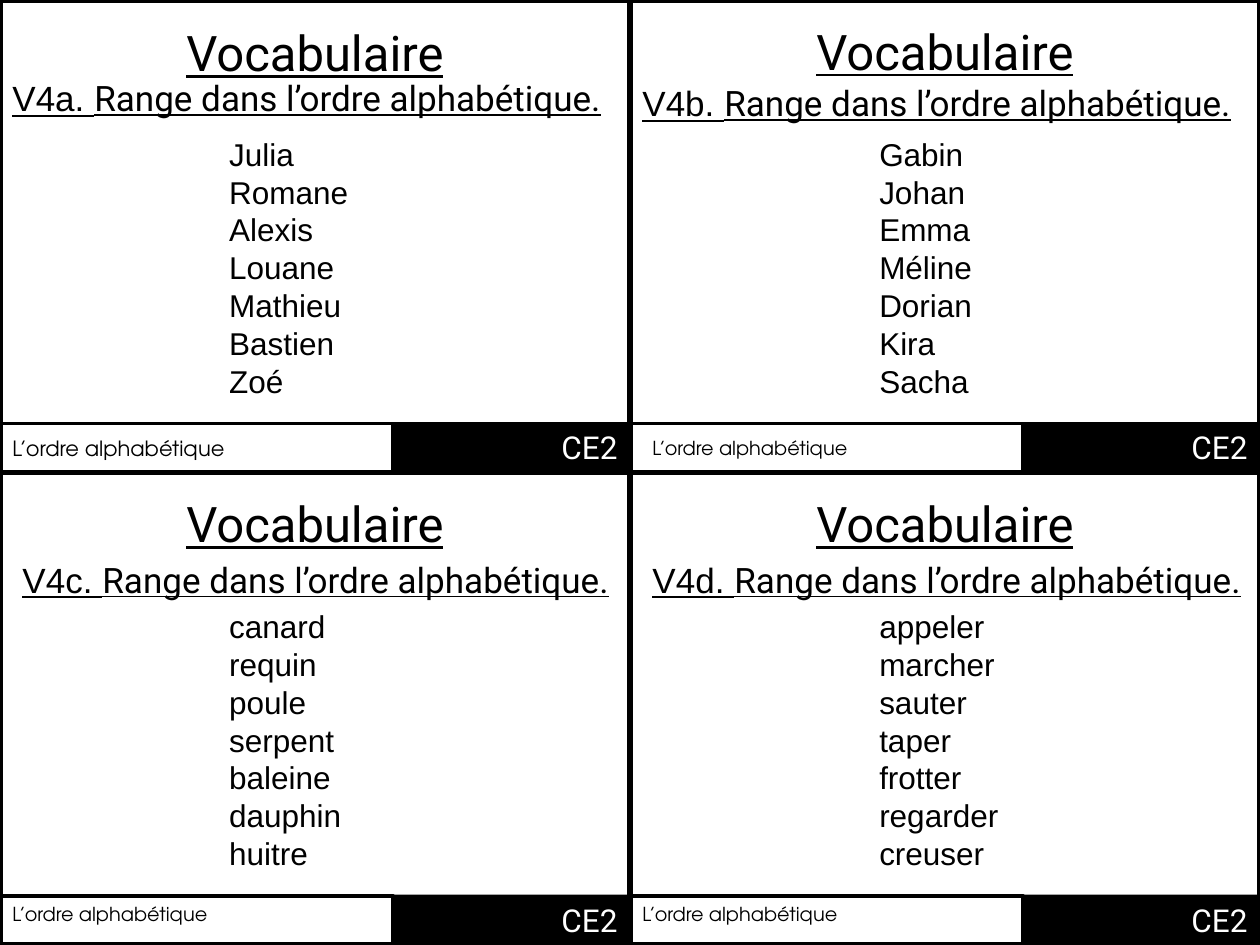
from dataclasses import dataclass

from pptx import Presentation
from pptx.dml.color import RGBColor
from pptx.enum.shapes import MSO_SHAPE
from pptx.enum.text import PP_ALIGN
from pptx.util import Inches, Pt

BLACK = RGBColor(0, 0, 0)
WHITE = RGBColor(255, 255, 255)
CARD_WIDTH, CARD_HEIGHT = 5, 3.75
LABEL_WIDTH = 3.12


@dataclass
class Card:
    """Content of one exercise card and the offsets that vary between cards."""

    code: str
    words: str
    title_top: float
    task_left: float
    task_top: float
    words_left: float
    label_left: float
    label_top: float
    label_size: int


CARDS = [
    Card("V4a. ", "Julia Romane Alexis Louane Mathieu Bastien Zoé",
         0.13, 0, 0.56, 1.72, 0, 3.41, 12),
    Card("V4b. ", "Gabin Johan Emma Méline Dorian Kira Sacha",
         0.12, 0, 0.6, 1.88, 0.08, 3.41, 11),
    Card("V4c. ", "canard requin poule serpent baleine dauphin huitre",
         0.12, 0.08, 0.63, 1.72, 0, 3.36, 11),
    Card("V4d. ", "appeler marcher sauter taper frotter regarder creuser",
         0.12, 0.08, 0.63, 1.88, 0, 3.36, 11),
]


def style_font(font, name, size, color=BLACK, underline=None):
    """Set the face, size, colour and underline of a font."""
    font.name = name
    font.size = Pt(size)
    font.color.rgb = color
    font.underline = underline


def add_box(slide, left, top, width, height, fill=None, line_width=None):
    """Add a rectangle with an optional fill and black outline."""
    box = slide.shapes.add_shape(MSO_SHAPE.RECTANGLE, Inches(left), Inches(top),
                                 Inches(width), Inches(height))
    box.shadow.inherit = False
    if fill is None:
        box.fill.background()
    else:
        box.fill.solid()
        box.fill.fore_color.rgb = fill
    if line_width is None:
        box.line.fill.background()
    else:
        box.line.color.rgb = BLACK
        box.line.width = Pt(line_width)
    return box


def add_text(slide, left, top, width, height):
    """Add a wrapping text box and return its text frame."""
    frame = slide.shapes.add_textbox(Inches(left), Inches(top), Inches(width),
                                     Inches(height)).text_frame
    frame.word_wrap = True
    return frame


def add_title(slide, left, top):
    """Add the centred card title."""
    title = add_text(slide, left, top, CARD_WIDTH, 0.57).paragraphs[0]
    title.text = "Vocabulaire"
    title.alignment = PP_ALIGN.CENTER
    style_font(title.font, "Roboto", 28, underline=True)


def add_task(slide, left, top, code):
    """Add the underlined instruction with its exercise code."""
    task = add_text(slide, left, top, 4.92, 0.44).paragraphs[0]
    for text, face in ((code, "Arial"), ("Range dans l’ordre alphabétique.", "Roboto")):
        run = task.add_run()
        run.text = text
        style_font(run.font, face, 20, underline=True)


def add_words(slide, left, top, words):
    """Add the list of words, one to a paragraph."""
    frame = add_text(slide, left, top, 1.25, 2.22)
    frame.text = "\n".join(words.split())
    for word in frame.paragraphs:
        word.line_spacing = Pt(21.6)
        style_font(word.font, "Arial", 18)


def add_footer(slide, left, top, card):
    """Add the topic label and the class level at the foot of a card."""
    level_box = add_box(slide, left + LABEL_WIDTH, top + 3.35,
                        CARD_WIDTH - LABEL_WIDTH, 0.4, fill=BLACK)
    level = level_box.text_frame.paragraphs[0]
    level.text = "CE2"
    level.alignment = PP_ALIGN.RIGHT
    style_font(level.font, "Roboto", 18, WHITE)
    add_box(slide, left, top + 3.36, LABEL_WIDTH, 0.39, line_width=2)
    topic = add_text(slide, left + card.label_left, top + card.label_top,
                     LABEL_WIDTH, 0.3).paragraphs[0]
    topic.text = "L’ordre alphabétique"
    style_font(topic.font, "TeX Gyre Adventor", card.label_size)


def add_card(slide, left, top, card):
    """Add one complete exercise card."""
    add_box(slide, left, top, CARD_WIDTH, CARD_HEIGHT, WHITE, 3)
    add_title(slide, left, top + card.title_top)
    add_task(slide, left + card.task_left, top + card.task_top, card.code)
    add_words(slide, left + card.words_left, top + 1.02, card.words)
    add_footer(slide, left, top, card)


def main():
    """Build the sheet of four cards."""
    presentation = Presentation()
    presentation.slide_width = Inches(2 * CARD_WIDTH)
    presentation.slide_height = Inches(2 * CARD_HEIGHT)
    slide = presentation.slides.add_slide(presentation.slide_layouts[6])
    for index, card in enumerate(CARDS):
        row, column = divmod(index, 2)
        add_card(slide, column * CARD_WIDTH, row * CARD_HEIGHT, card)
    presentation.save("out.pptx")


if __name__ == "__main__":
    main()
